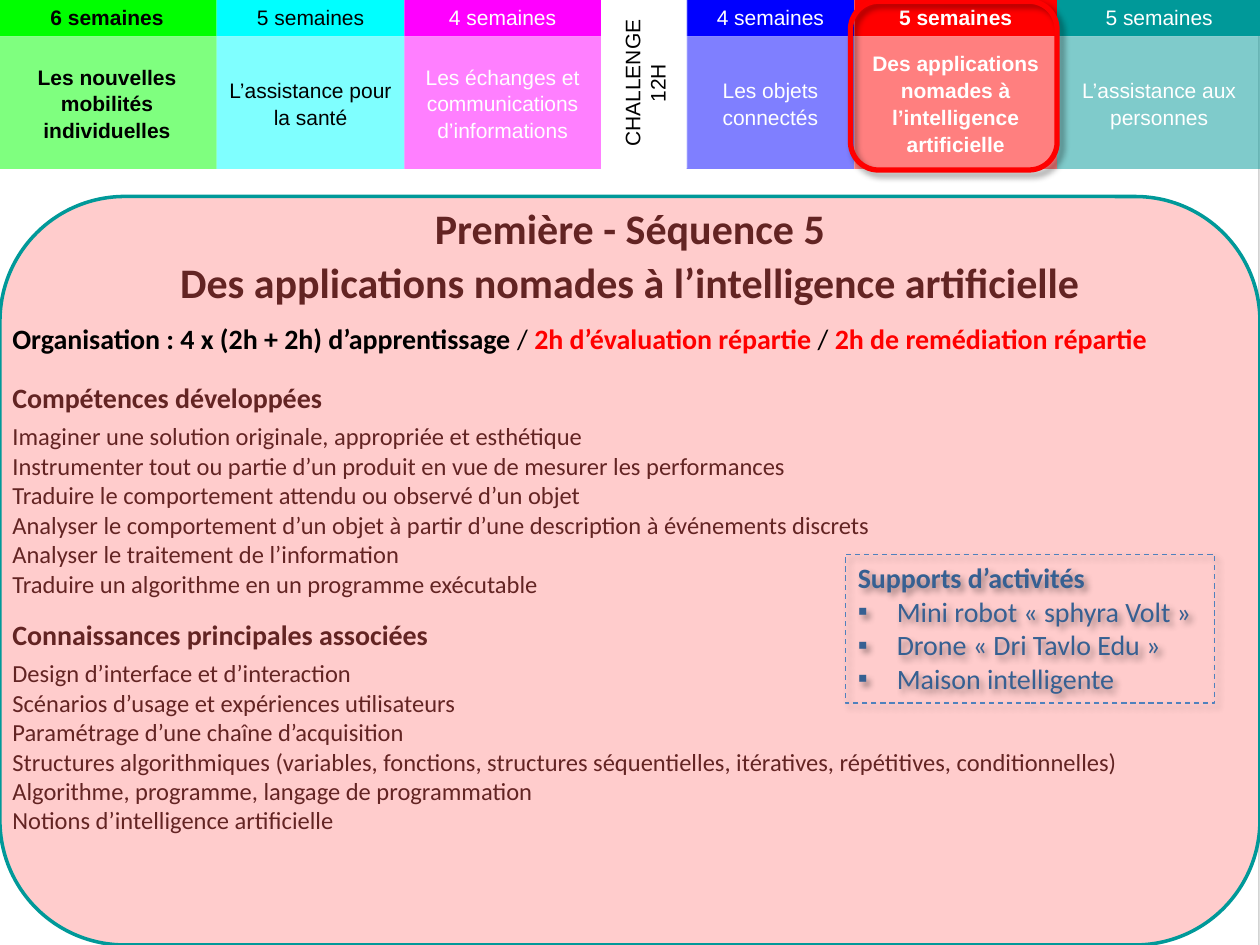
from lxml import etree
from pptx import Presentation
from pptx.dml.color import RGBColor
from pptx.enum import dml, shapes, text
from pptx.oxml.ns import qn
from pptx.util import Inches, Pt

BLACK = RGBColor(0, 0, 0)
WHITE = RGBColor(255, 255, 255)
GREEN = RGBColor(0, 255, 0)
CYAN = RGBColor(0, 255, 255)
MAGENTA = RGBColor(255, 0, 255)
BLUE = RGBColor(0, 0, 255)
RED = RGBColor(255, 0, 0)
TEAL = RGBColor(0, 0x99, 0x99)
MAROON = RGBColor(0x63, 0x24, 0x23)
STEEL = RGBColor(0x36, 0x60, 0x92)
STEEL_LINE = RGBColor(0x4F, 0x81, 0xBD)

# left, width, colour, duration, theme, text colour, bold
SEQUENCES = [
    (-0.02, 1.74, GREEN, "6 semaines", "Les nouvelles mobilités individuelles", BLACK, True),
    (1.72, 1.49, CYAN, "5 semaines", "L’assistance pour la santé", BLACK, False),
    (3.21, 1.56, MAGENTA, "4 semaines", "Les échanges et communications d’informations", WHITE, False),
    (5.45, 1.33, BLUE, "4 semaines", "Les objets connectés", WHITE, False),
    (6.78, 1.61, RED, "5 semaines", "Des applications nomades à l’intelligence artificielle", WHITE, True),
    (8.39, 1.62, TEAL, "5 semaines", "L’assistance aux personnes", WHITE, False),
]
TITLE = ["Première - Séquence 5", "Des applications nomades à l’intelligence artificielle"]
ORGANISATION = [
    ("Organisation : 4 x (2h + 2h) d’apprentissage ", BLACK, True),
    ("/ ", BLACK, False),
    ("2h d’évaluation répartie ", RED, True),
    ("/ ", BLACK, False),
    ("2h de remédiation répartie", RED, True),
]
# top of the heading, heading, items
SECTIONS = [
    (2.97, "Compétences développées", [
        "Imaginer une solution originale, appropriée et esthétique",
        "Instrumenter tout ou partie d’un produit en vue de mesurer les performances",
        "Traduire le comportement attendu ou observé d’un objet",
        "Analyser le comportement d’un objet à partir d’une description à événements discrets",
        "Analyser le traitement de l’information",
        "Traduire un algorithme en un programme exécutable",
    ]),
    (4.85, "Connaissances principales associées", [
        "Design d’interface et d’interaction",
        "Scénarios d’usage et expériences utilisateurs",
        "Paramétrage d’une chaîne d’acquisition",
        "Structures algorithmiques (variables, fonctions, structures séquentielles, "
        "itératives, répétitives, conditionnelles)",
        "Algorithme, programme, langage de programmation",
        "Notions d’intelligence artificielle",
    ]),
]
SUPPORTS_HEADING = "Supports d’activités"
SUPPORTS = ["Mini robot « sphyra Volt »", "Drone « Dri Tavlo Edu »", "Maison intelligente"]

BAND_TOP, BAND_SPLIT, BAND_BOTTOM = -0.01, 0.29, 1.34
CENTER = text.PP_ALIGN.CENTER
MIDDLE = text.MSO_ANCHOR.MIDDLE
TOP = text.MSO_ANCHOR.TOP


def add_box(slide, box, fill=None, alpha=100, line=None, width=0.75, rounded=False):
    kind = shapes.MSO_SHAPE.ROUNDED_RECTANGLE if rounded else shapes.MSO_SHAPE.RECTANGLE
    sp = slide.shapes.add_shape(kind, *map(Inches, box))
    sp.shadow.inherit = False
    if fill is None:
        sp.fill.background()
    else:
        sp.fill.solid()
        sp.fill.fore_color.rgb = fill
        if alpha < 100:
            color = sp.fill._xPr.find(".//" + qn("a:srgbClr"))
            etree.SubElement(color, qn("a:alpha"), val=str(alpha * 1000))
    if line is None:
        sp.line.fill.background()
    else:
        sp.line.color.rgb = line
        sp.line.width = Pt(width)
    return sp


def add_shadow(sp, alpha, blur, dist, angle):
    effects = sp._element.spPr.find(qn("a:effectLst"))
    shadow = etree.SubElement(effects, qn("a:outerShdw"), blurRad=str(Pt(blur)),
                              dist=str(Pt(dist)), dir=str(angle * 60000), rotWithShape="0")
    color = etree.SubElement(shadow, qn("a:srgbClr"), val=str(BLACK))
    etree.SubElement(color, qn("a:alpha"), val=str(alpha * 1000))


def write(sp, lines, size, color, bold=False, font="Calibri", align=None, anchor=TOP, spacing=None):
    tf = sp.text_frame
    tf.word_wrap = True
    tf.vertical_anchor = anchor
    tf.text = "\n".join(lines)
    for p in tf.paragraphs:
        p.alignment = align or text.PP_ALIGN.LEFT
        p.line_spacing = spacing
        for r in p.runs:
            style(r, size, color, bold, font)
    return tf


def style(r, size, color, bold, font="Calibri"):
    r.font.size = Pt(size)
    r.font.name = font
    r.font.bold = bold
    r.font.color.rgb = color


def add_text(slide, top, height, lines, size, **options):
    sp = slide.shapes.add_textbox(Inches(0), Inches(top), Inches(10), Inches(height))
    return write(sp, lines, size, MAROON, **options)


def add_bullet(p, indent):
    pPr = p._p.get_or_add_pPr()
    pPr.set("marL", str(Inches(indent)))
    pPr.set("indent", str(-Inches(indent)))
    color = etree.SubElement(pPr, qn("a:buClr"))
    etree.SubElement(color, qn("a:srgbClr"), val=str(STEEL))
    etree.SubElement(pPr, qn("a:buFont"), typeface="Arial")
    etree.SubElement(pPr, qn("a:buChar"), char="▪")


def add_sequence_panel(slide):
    add_box(slide, (0, 1.56, 10, 5.94), RED, 20, TEAL, 2, rounded=True)
    tf = add_text(slide, 1.56, 0.94, TITLE, 24, bold=True, align=CENTER)
    tf.paragraphs[1].line_spacing = 1.07

    tf = add_text(slide, 2.5, 0.37, [], 16, anchor=MIDDLE)
    for words, color, bold in ORGANISATION:
        r = tf.paragraphs[0].add_run()
        r.text = words
        style(r, 16, color, bold)

    for top, heading, items in SECTIONS:
        add_text(slide, top, 0.37, [heading], 16, bold=True)
        add_text(slide, top + 0.32, 1.51, items, 14, anchor=MIDDLE)


def add_supports(slide):
    sp = add_box(slide, (6.71, 4.4, 2.93, 1.18), line=STEEL_LINE)
    sp.line.dash_style = dml.MSO_LINE.DASH
    add_shadow(sp, 40, 4, 3, 45)
    tf = write(sp, [SUPPORTS_HEADING, *SUPPORTS], 16, STEEL)
    heading, *items = tf.paragraphs
    heading.runs[0].font.bold = True
    for p in items:
        add_bullet(p, 0.31)


def add_timeline(slide):
    for left, width, fill, weeks, theme, color, bold in SEQUENCES:
        for top, bottom, words, alpha, spacing in (
            (BAND_SPLIT, BAND_BOTTOM, theme, 50, 1.07),
            (BAND_TOP, BAND_SPLIT, weeks, 100, None),
        ):
            sp = add_box(slide, (left, top, width, bottom - top), fill, alpha)
            write(sp, [words], 12, color, bold, "Arial", CENTER, MIDDLE, spacing)

    challenge = add_box(slide, (4.44, 0.32, 1.35, 0.68), WHITE, 50)
    challenge.rotation = 270
    write(challenge, ["CHALLENGE 12H"], 12, BLACK, False, "Arial", CENTER, MIDDLE)

    current = add_box(slide, (6.75, 0.01, 1.64, 1.34), line=RED, width=3, rounded=True)
    add_shadow(current, 40, 4, 3, 45)


def main():
    prs = Presentation()
    prs.slide_width, prs.slide_height = Inches(10), Inches(7.5)
    s = prs.slides.add_slide(prs.slide_layouts[6])
    page = add_box(s, (-0.02, -0.02, 10, 7.54), WHITE, line=WHITE)
    add_shadow(page, 35, 3.1, 1.8, 90)
    add_sequence_panel(s)
    add_supports(s)
    add_timeline(s)
    prs.save("out.pptx")


if __name__ == "__main__":
    main()
